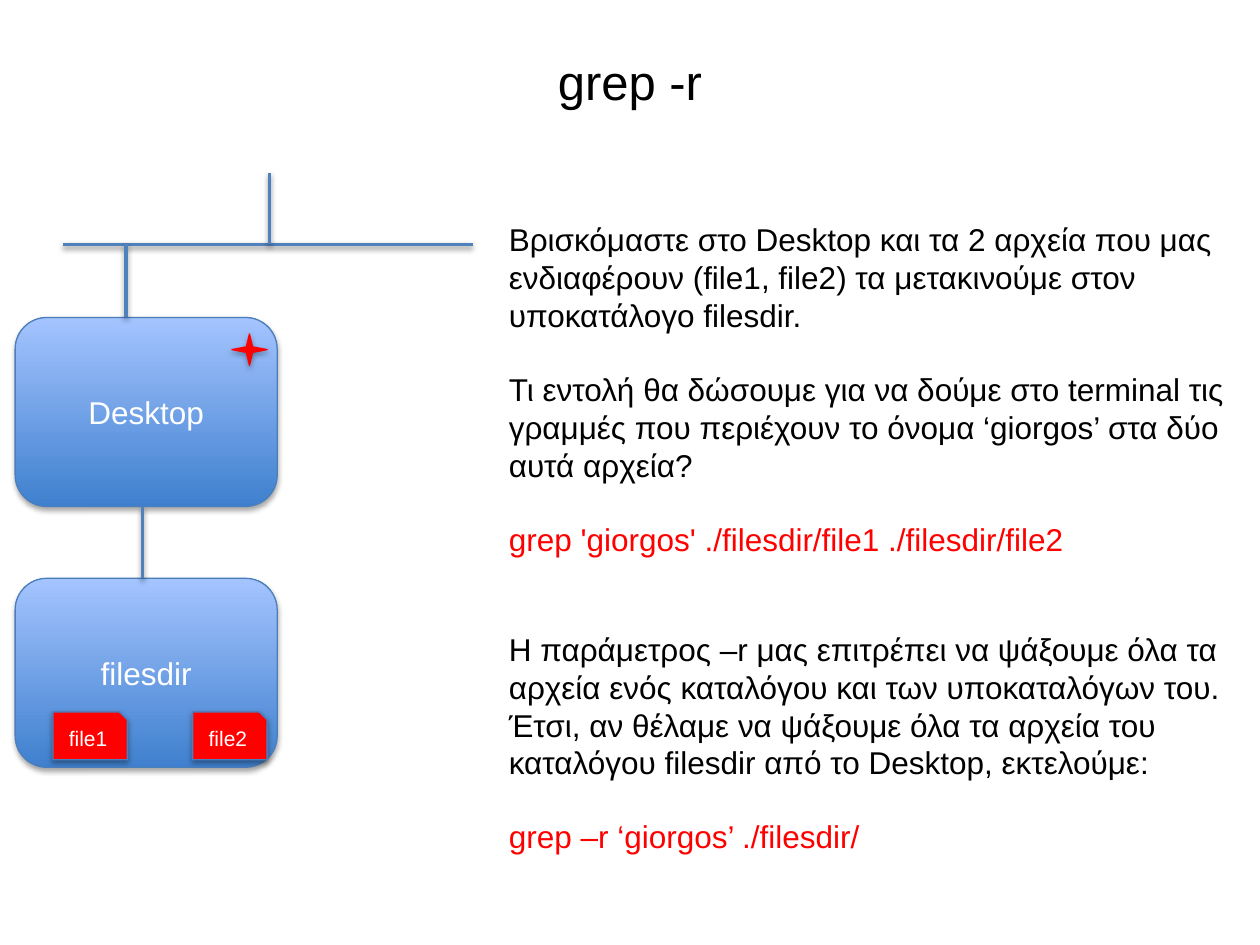
from lxml import etree
from pptx import Presentation
from pptx import util as u
from pptx.dml.color import RGBColor
from pptx.enum import shapes, text
from pptx.oxml.ns import qn

FONT = "Arial"
BLACK, WHITE, RED = "000000", "FFFFFF", "FF0000"
EDGE, LINK = "4B7EBC", "4F81BD"
BLUE_UP = ("3F80CE", "A4C4FF")
BLANK_LINE = 20.7
EXPLANATION = (
    ("Βρισκόμαστε στο Desktop και τα 2 αρχεία που μας ενδιαφέρουν (file1, file2) "
     "τα μετακινούμε στον υποκατάλογο filesdir.", BLACK, 0),
    ("Τι εντολή θα δώσουμε για να δούμε στο terminal τις γραμμές που περιέχουν "
     "το όνομα ‘giorgos’ στα δύο αυτά αρχεία?", BLACK, 1),
    ("grep 'giorgos' ./filesdir/file1 ./filesdir/file2", RED, 1),
    ("Η παράμετρος –r μας επιτρέπει να ψάξουμε όλα τα αρχεία ενός καταλόγου "
     "και των υποκαταλόγων του.", BLACK, 2),
    ("Έτσι, αν θέλαμε να ψάξουμε όλα τα αρχεία του καταλόγου filesdir από το "
     "Desktop, εκτελούμε:", BLACK, 0),
    ("grep –r ‘giorgos’ ./filesdir/", RED, 1),
)


def color(value):
    """Turn a hex string into a colour."""
    return RGBColor.from_string(value)


def inches(*lengths):
    """Turn numbers into lengths."""
    return [u.Inches(length) for length in lengths]


def assign(target, **values):
    """Set each named attribute of the target."""
    for name, value in values.items():
        setattr(target, name, value)


def cast_shadow(item, distance, alpha):
    """Give a shape or connector a soft shadow straight below it."""
    effects = etree.SubElement(item.element.spPr, qn("a:effectLst"))
    shadow = etree.SubElement(effects, qn("a:outerShdw"), blurRad=str(u.Pt(3.1)),
                              dist=str(u.Pt(distance)), dir="5400000", rotWithShape="0")
    tone = etree.SubElement(shadow, qn("a:srgbClr"), val=BLACK)
    etree.SubElement(tone, qn("a:alpha"), val=str(alpha * 1000))


def write(para, words, size, ink, **layout):
    """Put one formatted span into a paragraph."""
    assign(para, **layout)
    span = para.add_run()
    span.text = words
    assign(span.font, name=FONT, size=u.Pt(size))
    span.font.color.rgb = color(ink)


def add_block(page, kind, box, fill, edge, label="", size=18):
    """Draw a shadowed shape with a solid or two-stop fill and a centred label."""
    block = page.shapes.add_shape(kind, *inches(*box))
    if isinstance(fill, tuple):
        block.fill.gradient()
        block.fill.gradient_angle = 90
        for stop, tone, position in zip(block.fill.gradient_stops, fill, (0, 1)):
            stop.color.rgb = color(tone)
            stop.position = position
    else:
        block.fill.solid()
        block.fill.fore_color.rgb = color(fill)
    block.line.color.rgb = color(edge)
    block.line.width = u.Pt(0.75)
    cast_shadow(block, 1.8, 35)
    if label:
        block.text_frame.vertical_anchor = text.MSO_ANCHOR.MIDDLE
        write(block.text_frame.paragraphs[0], label, size, WHITE,
              alignment=text.PP_ALIGN.CENTER)


def add_link(page, start, end):
    """Draw a straight branch of the directory tree."""
    link = page.shapes.add_connector(shapes.MSO_CONNECTOR.STRAIGHT, *inches(*start, *end))
    link.line.color.rgb = color(LINK)
    link.line.width = u.Pt(2)
    cast_shadow(link, 1.6, 38)


def add_title(page, box, words):
    """Place the centred slide title."""
    frame = page.shapes.add_textbox(*inches(*box)).text_frame
    assign(frame, word_wrap=True, vertical_anchor=text.MSO_ANCHOR.MIDDLE)
    write(frame.paragraphs[0], words, 28, BLACK, alignment=text.PP_ALIGN.CENTER)


def add_explanation(page, box):
    """Place the explanation, with commands in red."""
    frame = page.shapes.add_textbox(*inches(*box)).text_frame
    frame.word_wrap = True
    for index, (words, ink, gap) in enumerate(EXPLANATION):
        para = frame.add_paragraph() if index else frame.paragraphs[0]
        write(para, words, 18, ink, space_before=u.Pt(gap * BLANK_LINE))


def add_tree(page, box):
    """Draw the directory tree from its trunk down to the files."""
    left, top, width, height = box
    folder_width, folder_height, gap = 2.08, 1.5, 0.57
    branch = top + gap
    desktop = branch + 0.58
    filesdir = top + height - folder_height
    kind = shapes.MSO_SHAPE
    for label, y in (("filesdir", filesdir), ("Desktop", desktop)):
        add_block(page, kind.ROUNDED_RECTANGLE, (left, y, folder_width, folder_height),
                  BLUE_UP, EDGE, label)
    add_block(page, kind.STAR_4_POINT, (left + 1.72, desktop + 0.13, 0.28, 0.25), RED, RED)
    add_link(page, (left + 0.38, branch), (left + width, branch))
    for x, start, end in ((2.02, top, branch), (0.88, branch, desktop),
                          (1.01, desktop + folder_height, filesdir)):
        add_link(page, (left + x, start), (left + x, end))
    for label, x in (("file1", 0.3), ("file2", 1.41)):
        add_block(page, kind.SNIP_1_RECTANGLE, (left + x, filesdir + 1.06, 0.59, 0.38),
                  RED, EDGE, label, 12)


def main():
    """Build and save the slide."""
    deck = Presentation()
    assign(deck, slide_width=u.Inches(10), slide_height=u.Inches(7.5))
    page = deck.slides.add_slide(deck.slide_layouts[6])
    add_title(page, (0.5, 0.3, 9, 0.68), "grep -r")
    add_tree(page, (0.12, 1.37, 3.63, 4.72))
    add_explanation(page, (3.94, 1.7, 5.9, 5.25))
    deck.save("out.pptx")


if __name__ == "__main__":
    main()
